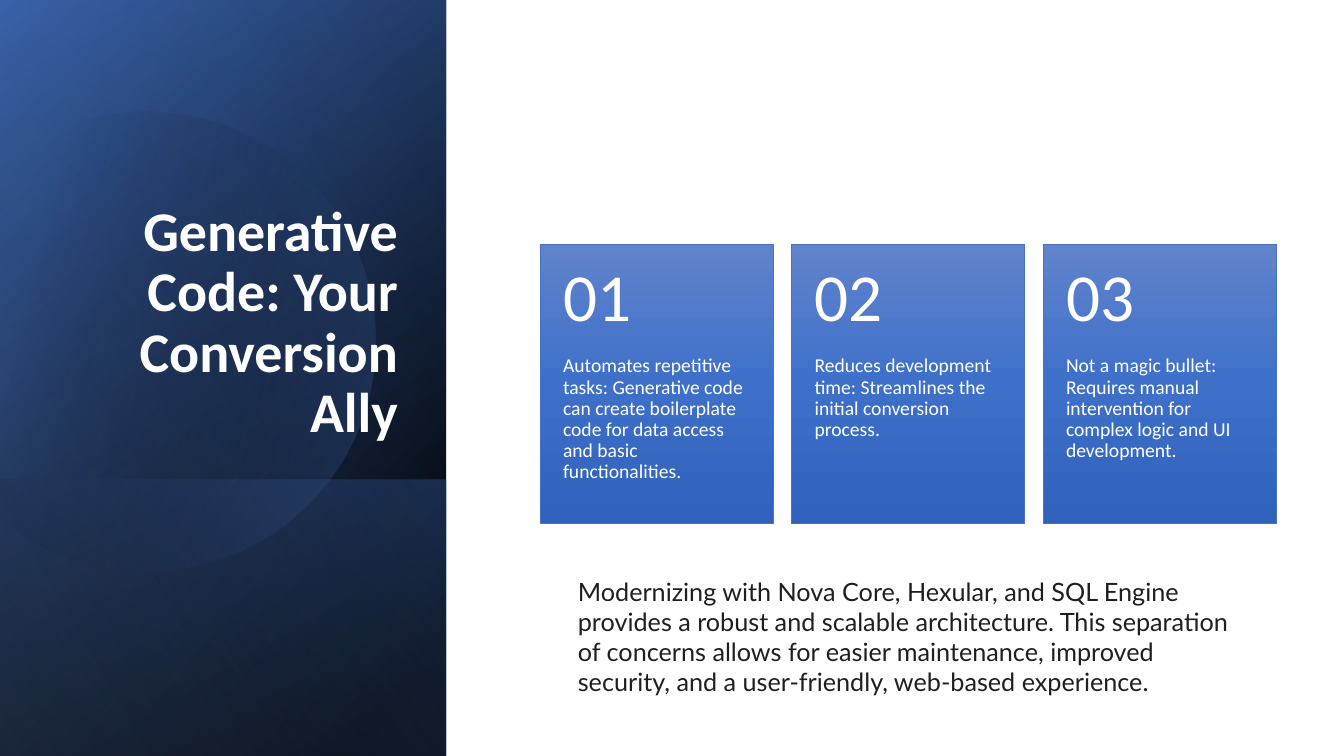
from math import cos, radians, sin

from lxml import etree
from pptx import Presentation
from pptx.dml.color import RGBColor
from pptx.enum.shapes import MSO_SHAPE
from pptx.enum.text import MSO_ANCHOR, MSO_AUTO_SIZE, PP_ALIGN
from pptx.oxml.ns import qn
from pptx.util import Pt

SLIDE_W, SLIDE_H = 1344, 756
EMU_PER_PX = 12192000 / SLIDE_W
PANEL_W = 446
PANEL_LAYERS = [
    # top, height, gradient stops (position, colour, opacity), angle
    (0, SLIDE_H, [(8, "000000", 100), (100, "2F5597", 100)], 50),
    (0, SLIDE_H, [(0, "000000", 0), (99, "4472C4", 46)], 30),
    (480, 276, [(2, "4472C4", 29), (100, "000000", 30)], 130),
]
DISC_STOPS = [(29, "000000", 0), (100, "4472C4", 43)]
PANEL_SHEEN = (0, SLIDE_H, [(0, "000000", 0), (99, "8FAADC", 11)], 120)

CARD_STOPS = [(0, "6183CB", 100), (50, "3E70CA", 100), (100, "3062BB", 100)]
CARDS_LEFT, CARDS_RIGHT, CARDS_TOP = 540, 1276, 244
CARD_W, CARD_H, NUMBER_H = 233, 279, 112
BENEFITS = [
    "Automates repetitive tasks: Generative code can create boilerplate "
    "code for data access and basic functionalities.",
    "Reduces development time: Streamlines the initial conversion process.",
    "Not a magic bullet: Requires manual intervention for complex logic "
    "and UI development.",
]
SUMMARY = (
    "Modernizing with Nova Core, Hexular, and SQL Engine provides a robust "
    "and scalable architecture. This separation of concerns allows for easier "
    "maintenance, improved security, and a user-friendly, web-based experience."
)


def px(length):
    return round(length * EMU_PER_PX)


def colour(hex_code):
    return RGBColor.from_string(hex_code)


def fill_gradient(shape, stops, angle):
    """Fill with a linear gradient whose stops carry their own opacity."""
    shape.shadow.inherit = False
    shape.fill.background()
    properties = shape.element.spPr
    gradient = etree.Element(qn("a:gradFill"), rotWithShape="1")
    stop_list = etree.SubElement(gradient, qn("a:gsLst"))
    for position, hex_code, opacity in stops:
        stop = etree.SubElement(stop_list, qn("a:gs"), pos=str(position * 1000))
        tint = etree.SubElement(stop, qn("a:srgbClr"), val=hex_code)
        if opacity < 100:
            etree.SubElement(tint, qn("a:alpha"), val=str(opacity * 1000))
    etree.SubElement(gradient, qn("a:lin"), ang=str(angle * 60000), scaled="0")
    properties.replace(properties.find(qn("a:noFill")), gradient)


def add_panel_layer(slide, top, height, stops, angle):
    """Add a mirrored, quarter-turned rectangle that covers part of the panel."""
    left = (PANEL_W - height) / 2
    turned_top = top + (height - PANEL_W) / 2
    layer = slide.shapes.add_shape(
        MSO_SHAPE.RECTANGLE, px(left), px(turned_top), px(height), px(PANEL_W)
    )
    layer.rotation = 90
    layer.element.spPr.xfrm.set("flipH", "1")
    fill_gradient(layer, stops, angle)
    layer.line.fill.background()


def add_disc(slide):
    """Add the circle cut off by a chord at the slide's left edge."""
    centre_x, centre_y, radius = 145, 337, 230
    points = [
        (px(centre_x + radius * cos(radians(a))), px(centre_y + radius * sin(radians(a))))
        for a in range(242, 511, 4)
    ]
    builder = slide.shapes.build_freeform(*points[0])
    builder.add_line_segments(points[1:], close=True)
    disc = builder.convert_to_shape()
    disc.rotation = 343.9
    fill_gradient(disc, DISC_STOPS, 30)
    disc.line.fill.background()


def write(shape, text, size, hex_code, font="Calibri", bold=False, spacing=None):
    frame = shape.text_frame
    frame.word_wrap = True
    frame.text = text
    paragraph = frame.paragraphs[0]
    paragraph.line_spacing = spacing
    run_font = paragraph.runs[0].font
    run_font.size, run_font.name, run_font.bold = Pt(size), font, bold
    run_font.color.rgb = colour(hex_code)
    return frame


def add_text(slide, box, text, size, hex_code, **style):
    textbox = slide.shapes.add_textbox(*map(px, box))
    return write(textbox, text, size, hex_code, **style)


def set_margins(frame, left, top, right, bottom):
    frame.margin_left, frame.margin_top = px(left), px(top)
    frame.margin_right, frame.margin_bottom = px(right), px(bottom)


def add_card(slide, left, number, benefit):
    card = slide.shapes.add_shape(
        MSO_SHAPE.RECTANGLE, px(left), px(CARDS_TOP), px(CARD_W), px(CARD_H)
    )
    fill_gradient(card, CARD_STOPS, 90)
    card.line.color.rgb = colour("4472C4")
    card.line.width = Pt(0.5)

    body_box = (left, CARDS_TOP + NUMBER_H, CARD_W, CARD_H - NUMBER_H)
    body = add_text(slide, body_box, benefit, 14, "FFFFFF", spacing=0.9)
    set_margins(body, 23, 0, 23, 36)

    number_box = (left, CARDS_TOP, CARD_W, NUMBER_H)
    heading = add_text(slide, number_box, f"{number:02}", 48, "FFFFFF", spacing=0.9)
    set_margins(heading, 23, 18, 23, 18)
    heading.vertical_anchor = MSO_ANCHOR.MIDDLE


def place_title(slide, text):
    """Format the title and bring it in front of the panel."""
    title = slide.shapes.title
    title.left, title.top, title.width, title.height = map(px, (64, 186, 344, 264))
    frame = write(title, text, 40, "FFFFFF", bold=True, spacing=0.9)
    frame.auto_size = MSO_AUTO_SIZE.NONE
    frame.vertical_anchor = MSO_ANCHOR.BOTTOM
    frame.paragraphs[0].alignment = PP_ALIGN.RIGHT
    frame.paragraphs[0].space_after = Pt(6)
    title.element.getparent().append(title.element)


def main():
    deck = Presentation()
    deck.slide_width, deck.slide_height = px(SLIDE_W), px(SLIDE_H)
    slide = deck.slides.add_slide(deck.slide_layouts[5])

    for layer in PANEL_LAYERS:
        add_panel_layer(slide, *layer)
    add_disc(slide)
    add_panel_layer(slide, *PANEL_SHEEN)
    place_title(slide, "Generative Code: Your Conversion Ally")

    pitch = (CARDS_RIGHT - CARDS_LEFT - CARD_W) / (len(BENEFITS) - 1)
    for index, benefit in enumerate(BENEFITS):
        add_card(slide, CARDS_LEFT + index * pitch, index + 1, benefit)

    summary = add_text(slide, (568, 571, 679, 132), SUMMARY, 18, "1F1F1F", font="Lato")
    summary.auto_size = MSO_AUTO_SIZE.SHAPE_TO_FIT_TEXT
    deck.save("out.pptx")


if __name__ == "__main__":
    main()
